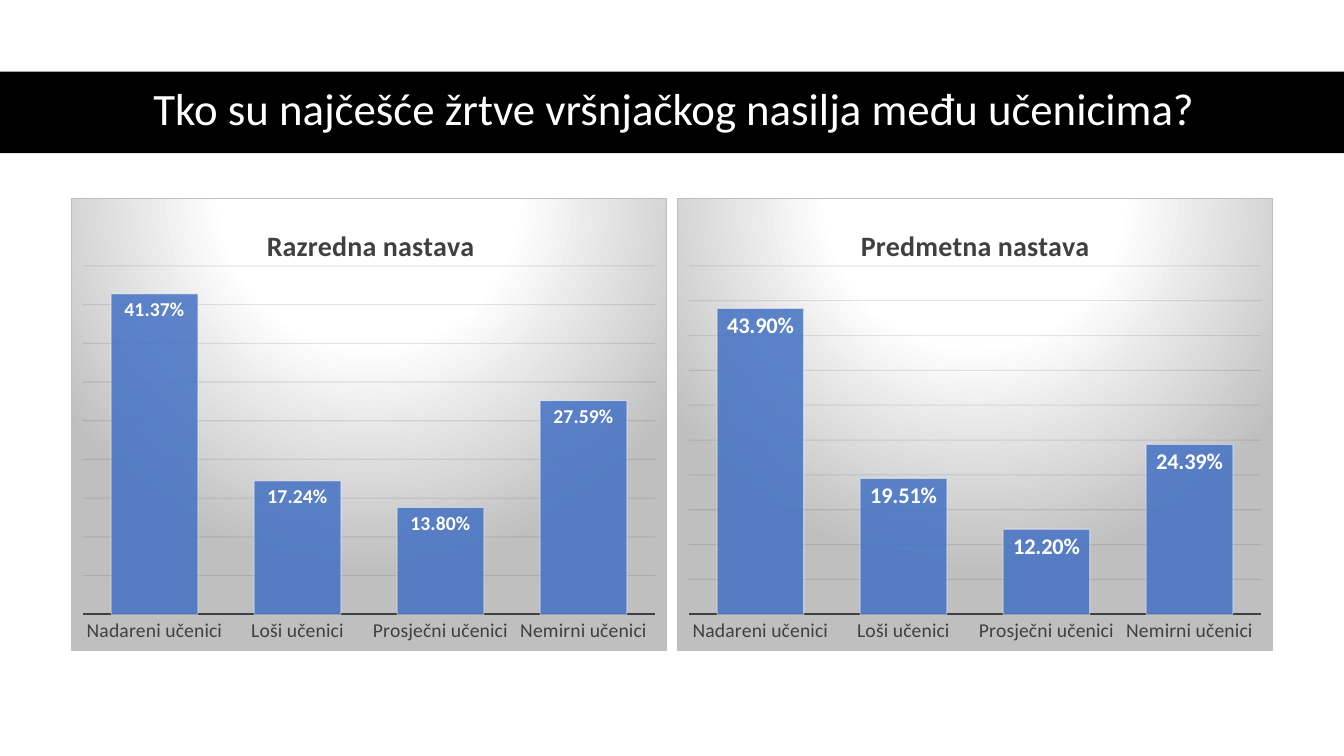
from dataclasses import dataclass

from pptx import Presentation
from pptx.chart.data import CategoryChartData
from pptx.dml.color import RGBColor
from pptx.enum import chart as ch, shapes, text
from pptx.oxml import parse_xml
from pptx.oxml.ns import nsdecls
from pptx.util import Inches, Pt


@dataclass(frozen=True)
class Theme:
    font: str = "Calibri"
    black: RGBColor = RGBColor.from_string("000000")
    white: RGBColor = RGBColor.from_string("FFFFFF")
    ink: RGBColor = RGBColor.from_string("404040")
    grid: RGBColor = RGBColor.from_string("0D0D0D")
    bar: RGBColor = RGBColor.from_string("4472C4")
    heading: Pt = Pt(32)
    chart_title: Pt = Pt(20)
    axis: Pt = Pt(14)
    hairline: Pt = Pt(0.75)
    axis_line: Pt = Pt(1.5)


THEME = Theme()

PANEL_FILL = f"""<c:spPr {nsdecls('c', 'a')}>
  <a:gradFill><a:gsLst>
    <a:gs pos="0"><a:srgbClr val="FFFFFF"/></a:gs>
    <a:gs pos="39000"><a:srgbClr val="FFFFFF"/></a:gs>
    <a:gs pos="100000"><a:srgbClr val="BFBFBF"/></a:gs>
  </a:gsLst><a:path path="circle">
    <a:fillToRect l="50000" t="-80000" r="50000" b="180000"/>
  </a:path></a:gradFill>
  <a:ln w="9525"><a:solidFill><a:srgbClr val="BFBFBF"/></a:solidFill></a:ln>
</c:spPr>"""


def manual_layout(x, y, size=None):
    """Return a c:layout placed by fractions of the chart area."""
    parts = '<c:xMode val="edge"/><c:yMode val="edge"/>'
    target = ""
    fractions = {"x": x, "y": y}
    if size:
        target = '<c:layoutTarget val="inner"/>'
        fractions.update(w=size[0], h=size[1])
    parts += "".join(f'<c:{k} val="{v}"/>' for k, v in fractions.items())
    return parse_xml(f"<c:layout {nsdecls('c')}><c:manualLayout>{target}{parts}"
                     "</c:manualLayout></c:layout>")


def set_alpha(root, query, percent):
    for color in root.xpath(query):
        color.append(parse_xml(f'<a:alpha {nsdecls("a")} val="{percent * 1000}"/>'))


prs = Presentation()
prs.slide_width, prs.slide_height = Inches(13.33), Inches(7.5)
slide = prs.slides.add_slide(prs.slide_layouts[5])

# Heading on a full-width band
band = slide.shapes.add_shape(shapes.MSO_SHAPE.RECTANGLE, 0, Inches(0.71),
                              prs.slide_width, Inches(0.81))
band.shadow.inherit = False
band.fill.solid()
band.fill.fore_color.rgb = THEME.black
band.line.fill.background()

heading = slide.shapes.title
band._element.getparent().insert(2, band._element)
heading.left, heading.top = Inches(0.61), Inches(0.7)
heading.width, heading.height = Inches(12.26), Inches(0.81)
heading.text_frame.text = "Tko su najčešće žrtve vršnjačkog nasilja među učenicima? "
heading.text_frame.vertical_anchor = text.MSO_ANCHOR.MIDDLE
question = heading.text_frame.paragraphs[0]
question.alignment = text.PP_ALIGN.CENTER
question.line_spacing = 0.9
question.font.name, question.font.size = THEME.font, THEME.heading
question.font.color.rgb = THEME.white

# One chart per school level: title, title x, left, axis top, label size, values
pupils = ["Nadareni učenici", "Loši učenici", "Prosječni učenici", "Nemirni učenici"]
levels = [
    ("Razredna nastava", 0.32, 0.7, 0.45, 14, [0.4137, 0.1724, 0.138, 0.2759]),
    ("Predmetna nastava", 0.3, 6.71, 0.5, 16, [0.439, 0.1951, 0.122, 0.2439]),
]
for level, title_x, left, axis_top, label_size, shares in levels:
    data = CategoryChartData(number_format="0.00%")
    data.categories = pupils
    data.add_series("Series 1", shares)
    chart = slide.shapes.add_chart(
        ch.XL_CHART_TYPE.COLUMN_CLUSTERED, Inches(left), Inches(1.96),
        Inches(5.92), Inches(4.5), data).chart
    chart.font.name, chart.font.size = THEME.font, Pt(10)
    chart.has_legend = False

    chart.has_title = True
    chart.chart_title.include_in_layout = False
    chart.chart_title.text_frame.text = level
    title_font = chart.chart_title.text_frame.paragraphs[0].font
    title_font.name, title_font.size, title_font.bold = THEME.font, THEME.chart_title, True
    title_font.color.rgb = THEME.ink

    groups = chart.category_axis
    groups.major_tick_mark = ch.XL_TICK_MARK.NONE
    groups.tick_labels.font.name = THEME.font
    groups.tick_labels.font.size = THEME.axis
    groups.tick_labels.font.color.rgb = THEME.ink
    groups.format.line.color.rgb = THEME.ink
    groups.format.line.width = THEME.axis_line

    scale = chart.value_axis
    scale.visible = False
    scale.minimum_scale, scale.maximum_scale, scale.major_unit = 0, axis_top, 0.05
    scale.has_major_gridlines = True
    scale.major_gridlines.format.line.color.rgb = THEME.grid
    scale.major_gridlines.format.line.width = THEME.hairline

    plot = chart.plots[0]
    plot.gap_width = 65
    plot.vary_by_categories = False
    bars = plot.series[0]
    bars.format.fill.solid()
    bars.format.fill.fore_color.rgb = THEME.bar
    bars.format.line.color.rgb = THEME.white
    bars.format.line.width = THEME.hairline
    labels = bars.data_labels
    labels.show_value = True
    labels.position = ch.XL_LABEL_POSITION.INSIDE_END
    labels.number_format, labels.number_format_is_linked = "0.00%", False
    labels.font.name, labels.font.size, labels.font.bold = THEME.font, Pt(label_size), True
    labels.font.color.rgb = THEME.white

    root = chart._chartSpace
    set_alpha(root, ".//c:ser/c:spPr/a:solidFill/a:srgbClr", 85)
    set_alpha(root, ".//c:ser/c:spPr/a:ln//a:srgbClr", 50)
    set_alpha(root, ".//c:majorGridlines//a:srgbClr", 10)
    for layout in root.xpath(".//c:title/c:layout | .//c:plotArea/c:layout"):
        layout.getparent().remove(layout)
    root.xpath("c:chart/c:title/c:tx")[0].addnext(manual_layout(title_x, 0.05))
    root.xpath("c:chart/c:plotArea")[0].insert(
        0, manual_layout(0.02, 0.15, size=(0.96, 0.77)))
    root.xpath("c:chart")[0].addnext(parse_xml(PANEL_FILL))

prs.save("out.pptx")
